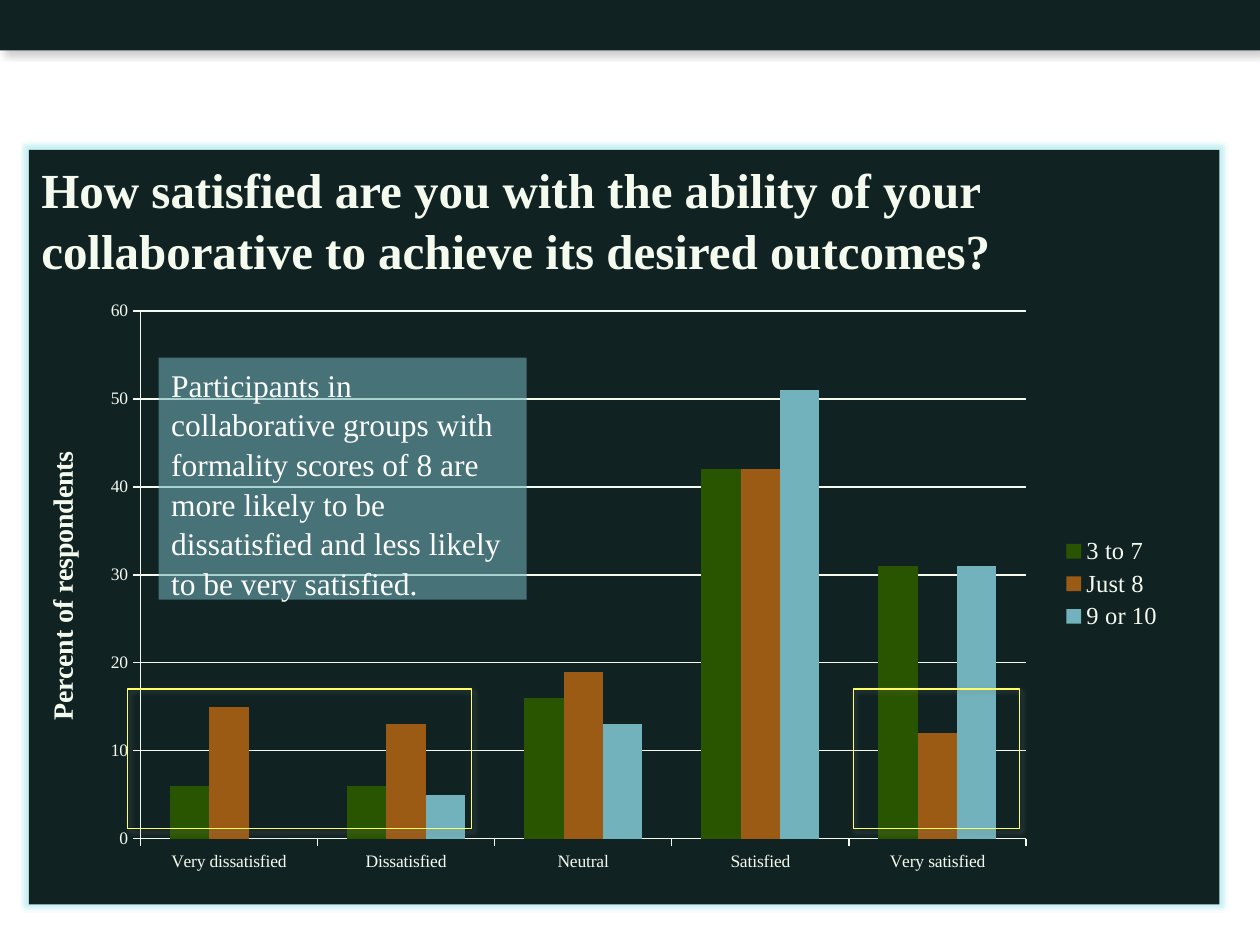
from dataclasses import dataclass

from lxml.etree import SubElement
from pptx import Presentation
from pptx.chart.data import CategoryChartData
from pptx.dml.color import RGBColor
from pptx.enum.chart import XL_CHART_TYPE, XL_LEGEND_POSITION, XL_TICK_MARK
from pptx.enum.shapes import MSO_SHAPE
from pptx.enum.text import MSO_ANCHOR, MSO_AUTO_SIZE, PP_ALIGN
from pptx.oxml import parse_xml
from pptx.oxml.ns import nsdecls, qn
from pptx.util import Cm, Pt


@dataclass(frozen=True)
class Theme:
    """Colours, font and type sizes of the slide."""

    font: str = "Times New Roman"
    dark: str = "112222"
    light: str = "F4FBEE"
    note_text: str = "FDFEFE"
    aqua: str = "71B2BC"
    glow: str = "8FE0E8"
    highlight: str = "FFFF66"
    shadow: str = "808080"
    series: tuple = ("2A5500", "9C5B14", "71B2BC")
    heading_size: int = 28
    note_size: int = 18
    axis_title_size: int = 16
    legend_size: int = 14
    chart_size: int = 10
    line_spacing: float = 1.05


THEME = Theme()
CATEGORIES = ["Very dissatisfied", "Dissatisfied", "Neutral", "Satisfied", "Very satisfied"]
SERIES = {
    "3 to 7": [6, 6, 16, 42, 31],
    "Just 8": [15, 13, 19, 42, 12],
    "9 or 10": [0, 5, 13, 51, 31],
}


def rgb(value):
    """Return a colour from its hexadecimal value."""
    return RGBColor.from_string(value)


def style_font(font, size, color, bold=False):
    """Apply the theme font with a size and colour."""
    font.name = THEME.font
    font.size = Pt(size)
    font.bold = bold
    font.color.rgb = rgb(color)


def add_effect(shape, name, color, opacity, **attributes):
    """Append one effect to a shape."""
    effects = shape._element.spPr.find(qn("a:effectLst"))
    effect = SubElement(effects, qn(f"a:{name}"), {key: str(value) for key, value in attributes.items()})
    effect_color = SubElement(effect, qn("a:srgbClr"), val=color)
    SubElement(effect_color, qn("a:alpha"), val=str(opacity * 1000))


def add_shadow(shape, opacity, blur, distance):
    """Give a shape a soft shadow down and to the right."""
    add_effect(shape, "outerShdw", THEME.shadow, opacity, blurRad=Pt(blur),
               dist=Pt(distance), dir=45 * 60000, rotWithShape=0)


def add_rectangle(slide, left, top, width, height, fill=None, line=None):
    """Add a rectangle with an optional fill and outline."""
    shape = slide.shapes.add_shape(MSO_SHAPE.RECTANGLE, Cm(left), Cm(top), Cm(width), Cm(height))
    shape.shadow.inherit = False
    if fill:
        shape.fill.solid()
        shape.fill.fore_color.rgb = rgb(fill)
    else:
        shape.fill.background()
    if line:
        shape.line.color.rgb = rgb(line)
        shape.line.width = Pt(0.75)
    else:
        shape.line.fill.background()
    return shape


def write_text(shape, text, size, color, bold=False):
    """Write one left-aligned paragraph at the top of a shape."""
    frame = shape.text_frame
    frame.word_wrap = True
    frame.vertical_anchor = MSO_ANCHOR.TOP
    paragraph = frame.paragraphs[0]
    paragraph.alignment = PP_ALIGN.LEFT
    paragraph.line_spacing = THEME.line_spacing
    run = paragraph.add_run()
    run.text = text
    style_font(run.font, size, color, bold)


def format_panel(slide):
    """Turn the title placeholder into the glowing dark panel."""
    panel = slide.shapes.title
    panel.left, panel.top, panel.width, panel.height = Cm(0.58), Cm(3.02), Cm(24), Cm(15.21)
    panel.shadow.inherit = False
    panel.fill.solid()
    panel.fill.fore_color.rgb = rgb(THEME.dark)
    add_effect(panel, "glow", THEME.glow, 50, rad=Pt(5))
    panel.text_frame.auto_size = MSO_AUTO_SIZE.NONE
    write_text(panel, "How satisfied are you with the ability of your collaborative "
               "to achieve its desired outcomes?", THEME.heading_size, THEME.light, bold=True)


def format_axis(axis):
    """Style the line, ticks and labels of an axis."""
    axis.major_tick_mark = XL_TICK_MARK.OUTSIDE
    axis.minor_tick_mark = XL_TICK_MARK.NONE
    axis.format.line.color.rgb = rgb(THEME.light)
    axis.format.line.width = Pt(0.75)
    style_font(axis.tick_labels.font, THEME.chart_size, THEME.light)


def format_value_axis(axis):
    """Set the scale, gridlines and title of the value axis."""
    format_axis(axis)
    axis.minimum_scale, axis.maximum_scale, axis.major_unit = 0, 60, 10
    axis.has_major_gridlines = True
    axis.major_gridlines.format.line.color.rgb = rgb(THEME.light)
    axis.major_gridlines.format.line.width = Pt(0.75)
    run = axis.axis_title.text_frame.paragraphs[0].add_run()
    run.text = "Percent of respondents"
    style_font(run.font, THEME.axis_title_size, THEME.light, bold=True)


def place_plot(chart, x, y, width, height):
    """Fix the inner plot area as fractions of the chart."""
    plot_area = chart._chartSpace.chart.plotArea
    for layout in plot_area.findall(qn("c:layout")):
        plot_area.remove(layout)
    plot_area.insert(0, parse_xml(
        f'<c:layout {nsdecls("c")}><c:manualLayout><c:layoutTarget val="inner"/>'
        f'<c:xMode val="edge"/><c:yMode val="edge"/><c:x val="{x}"/><c:y val="{y}"/>'
        f'<c:w val="{width}"/><c:h val="{height}"/></c:manualLayout></c:layout>'))


def add_satisfaction_chart(slide):
    """Add the clustered columns of satisfaction by formality score."""
    data = CategoryChartData()
    data.categories = CATEGORIES
    for name, values in SERIES.items():
        data.add_series(name, values)
    chart = slide.shapes.add_chart(XL_CHART_TYPE.COLUMN_CLUSTERED, Cm(0.51), Cm(5.79),
                                   Cm(23.19), Cm(11.96), data).chart
    style_font(chart.font, THEME.chart_size, THEME.light)
    chart.has_title = False
    chart.has_legend = True
    chart.legend.position = XL_LEGEND_POSITION.RIGHT
    chart.legend.include_in_layout = False
    style_font(chart.legend.font, THEME.legend_size, THEME.light)
    format_axis(chart.category_axis)
    format_value_axis(chart.value_axis)
    plot = chart.plots[0]
    plot.gap_width, plot.overlap, plot.vary_by_categories = 150, 0, False
    for series, color in zip(plot.series, THEME.series):
        series.format.fill.solid()
        series.format.fill.fore_color.rgb = rgb(color)
    place_plot(chart, 0.1, 0.04, 0.77, 0.89)


def add_highlight(slide, left, width):
    """Outline a group of columns near the baseline."""
    box = add_rectangle(slide, left, 13.89, width, 2.82, line=THEME.highlight)
    add_shadow(box, 60, 3, 2)


def add_note(slide):
    """Add the translucent note over the chart."""
    note = add_rectangle(slide, 3.2, 7.21, 7.42, 4.88, fill=THEME.aqua)
    fill_color = note._element.spPr.find(qn("a:solidFill")).find(qn("a:srgbClr"))
    SubElement(fill_color, qn("a:alpha"), val="56000")
    note.text_frame.auto_size = MSO_AUTO_SIZE.SHAPE_TO_FIT_TEXT
    write_text(note, "Participants in collaborative groups with formality scores of 8 are more "
               "likely to be dissatisfied and less likely to be very satisfied.",
               THEME.note_size, THEME.note_text)


def main():
    """Build and save the slide."""
    presentation = Presentation()
    presentation.slide_width, presentation.slide_height = Cm(25.4), Cm(19.05)
    slide = presentation.slides.add_slide(presentation.slide_layouts[5])
    band = add_rectangle(slide, 0, 0, 25.4, 1.02, fill=THEME.dark)
    add_shadow(band, 40, 4, 3)
    format_panel(slide)
    add_satisfaction_chart(slide)
    add_highlight(slide, 2.57, 6.93)
    add_highlight(slide, 17.2, 3.35)
    add_note(slide)
    presentation.save("out.pptx")


if __name__ == "__main__":
    main()
